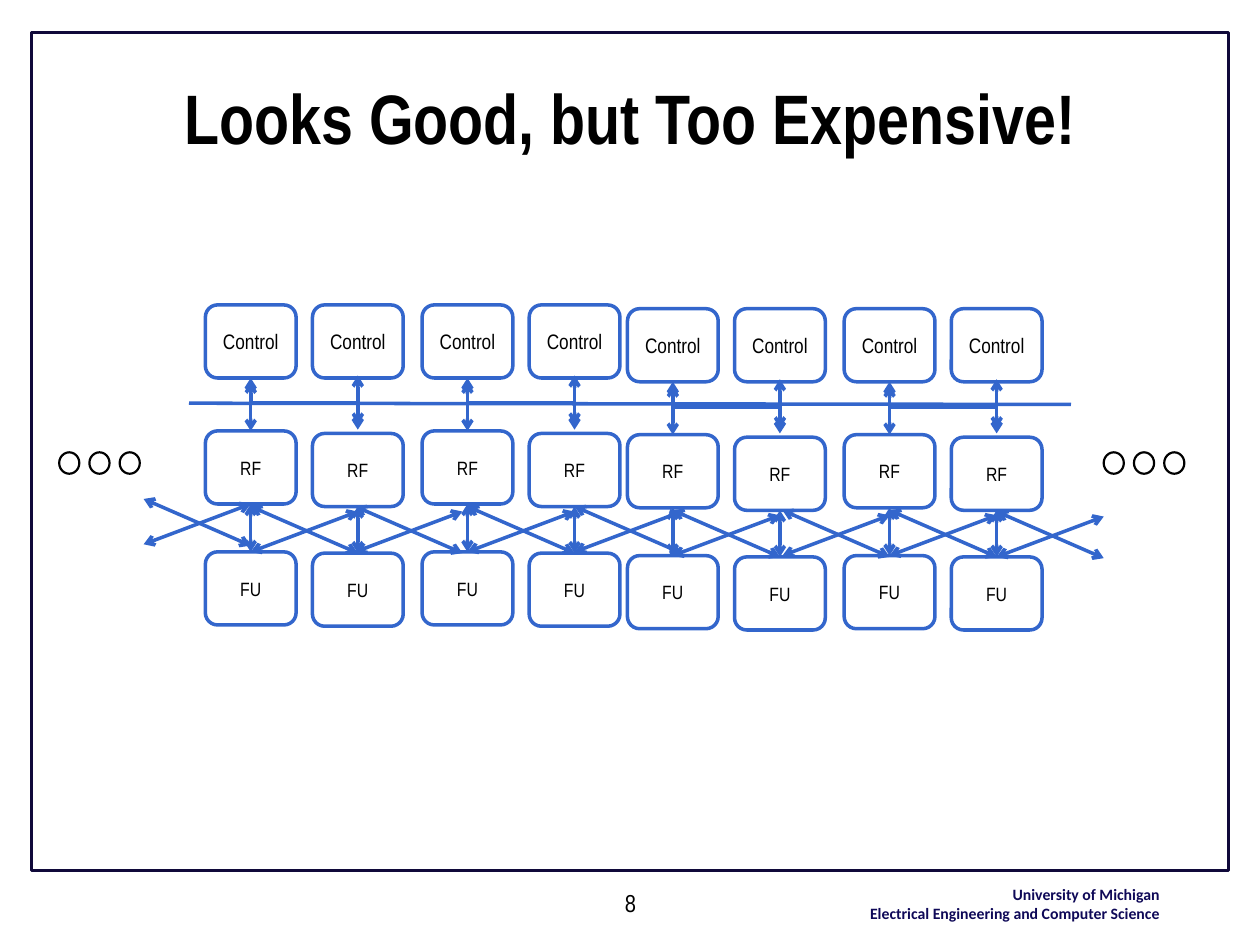
from pptx import Presentation
from pptx.dml.color import RGBColor
from pptx.enum.shapes import MSO_CONNECTOR, MSO_SHAPE
from pptx.enum.text import MSO_ANCHOR, PP_ALIGN
from pptx.oxml.ns import qn
from pptx.util import Inches, Pt
from lxml import etree

LINE, ELBOW = MSO_CONNECTOR.STRAIGHT, MSO_CONNECTOR.ELBOW
ROUND, RECT, OVAL = MSO_SHAPE.ROUNDED_RECTANGLE, MSO_SHAPE.RECTANGLE, MSO_SHAPE.OVAL
MID, TOP = MSO_ANCHOR.MIDDLE, MSO_ANCHOR.TOP
CENTER, RIGHT = PP_ALIGN.CENTER, PP_ALIGN.RIGHT

# Content
TITLE = "Looks Good, but Too Expensive!"
SCHOOL = "University of Michigan\nElectrical Engineering and Computer Science"
PAGE = "8"
ROWS = [("Control", 2.42, 2.42), ("RF", 3.42, 3.44), ("FU", 4.38, 4.39)]  # left, right top
PAIRS = [(1.63, 0), (3.35, 0), (4.98, 0.03), (6.7, 0.03)]  # left, drop
LINKS = [(2.82, 4.02), (4.56, 4.02), (6.21, 4.05), (1.14, 3.96), (7.91, 4.06)]
DOTS = [0.47, 8.76]

THEME = {
    "ink": RGBColor(0, 0, 0), "paper": RGBColor(255, 255, 255),
    "blue": RGBColor(0x33, 0x66, 0xCC), "frame": RGBColor(0x10, 0x09, 0x3A),
    "navy": RGBColor(0x0F, 0x09, 0x58),
    "font": "Arial Narrow", "foot": "Calibri",
    "title": 40, "page": 14, "school": 9, "Control": 12, "RF": 11, "FU": 11,
    "wire": 2, "edge": 1.5, "ring": 1.25,
}
WIDE, HIGH, STEP = 0.72, 0.58, 0.85
FALL, RISE = 0.37, 0.32

prs = Presentation()
prs.slide_width, prs.slide_height = Inches(10), Inches(7.5)
slide = prs.slides.add_slide(prs.slide_layouts[6])
shapes = slide.shapes


def write(shape, text, size, anchor=TOP, align=CENTER, font="font", color="ink", bold=False):
    frame = shape.text_frame
    frame.word_wrap = True
    frame.vertical_anchor = anchor
    frame.text = text
    for para in frame.paragraphs:
        para.alignment = align
        para.font.size = Pt(THEME[size])
        para.font.name = THEME[font]
        para.font.bold = bold
        para.font.color.rgb = THEME[color]


def draw(kind, x, y, w, h, color, width, fill=None):
    shape = shapes.add_shape(kind, *map(Inches, (x, y, w, h)))
    shape.shadow.inherit = False
    if fill:
        shape.fill.solid()
        shape.fill.fore_color.rgb = THEME[fill]
    else:
        shape.fill.background()
    shape.line.color.rgb = THEME[color]
    shape.line.width = Pt(THEME[width])
    return shape


def label(x, y, w, h, *args, **style):
    write(shapes.add_textbox(*map(Inches, (x, y, w, h))), *args, **style)


def box(x, y, text):
    shape = draw(ROUND, x, y, WIDE, HIGH, "blue", "wire", "paper")
    frame = shape.text_frame
    frame.margin_left = frame.margin_right = frame.margin_top = frame.margin_bottom = 0
    write(shape, text, text, MID)
    return shape


def wire(x1, y1, x2, y2, start=None, end=None, kind=LINE, heads=True):
    link = shapes.add_connector(kind, *map(Inches, (x1, y1, x2, y2)))
    link.line.color.rgb = THEME["blue"]
    link.line.width = Pt(THEME["wire"])
    if heads:
        line = link.line._get_or_add_ln()
        for tag in ("a:headEnd", "a:tailEnd"):
            etree.SubElement(line, qn(tag), type="arrow")
    etree.SubElement(link._element.spPr, qn("a:effectLst"))
    if start:
        link.begin_connect(start, 2)
    if end:
        link.end_connect(end, 0)
    return link


def elbow(x1, y1, x2, y2):
    # A quarter turn makes the bend leave and arrive vertically
    mx, my = (x1 + x2) / 2, (y1 + y2) / 2
    w, h = y2 - y1, x2 - x1
    link = wire(mx + w / 2, my - h / 2, mx - w / 2, my + h / 2, kind=ELBOW)
    link._element.spPr.find(qn("a:xfrm")).set("rot", str(270 * 60000))


def cross(x, y, left=None, right=None):
    wire(x, y, x + STEP, y + FALL, end=right)
    wire(x + STEP, y + 0.04, x, y + 0.04 + RISE, end=left)


# Frame, title and footer
draw(RECT, 0.25, 0.26, 9.5, 6.65, "frame", "edge")
label(6.25, 6.97, 3.05, 0.4, SCHOOL, "school", align=RIGHT, font="foot", color="navy", bold=True)
label(0.5, 0.3, 9, 1.25, TITLE, "title", anchor=MID, bold=True)
label(3.42, 7, 3.17, 0.33, PAGE, "page")

# Pairs of cores
for x, drop in PAIRS:
    a, b = x + WIDE / 2, x + WIDE / 2 + STEP
    left = [box(x, y + drop, name) for name, y, _ in ROWS]
    right = [box(x + STEP, y + drop, name) for name, _, y in ROWS]
    wire(a, 3 + drop, a, 3.42 + drop, left[0], left[1])
    elbow(a, 3.03 + drop, b, 3.37 + drop)
    wire(b, 2.98 + drop, b, 3.41 + drop)
    for col, mid in ((left, a), (right, b)):
        wire(mid, 4 + drop, mid, 4.38 + drop, col[1], col[2])
    cross(a, 4.02 + drop, left[2], right[2])

# Links between pairs and outward, then the shared bus
for x, y in LINKS:
    cross(x, y)
wire(1.5, 3.2, 8.5, 3.21, heads=False)

# Continuation dots
for x in DOTS:
    for i in range(3):
        draw(OVAL, x + 0.24 * i, 3.59, 0.16, 0.17, "ink", "ring")

prs.save("out.pptx")
